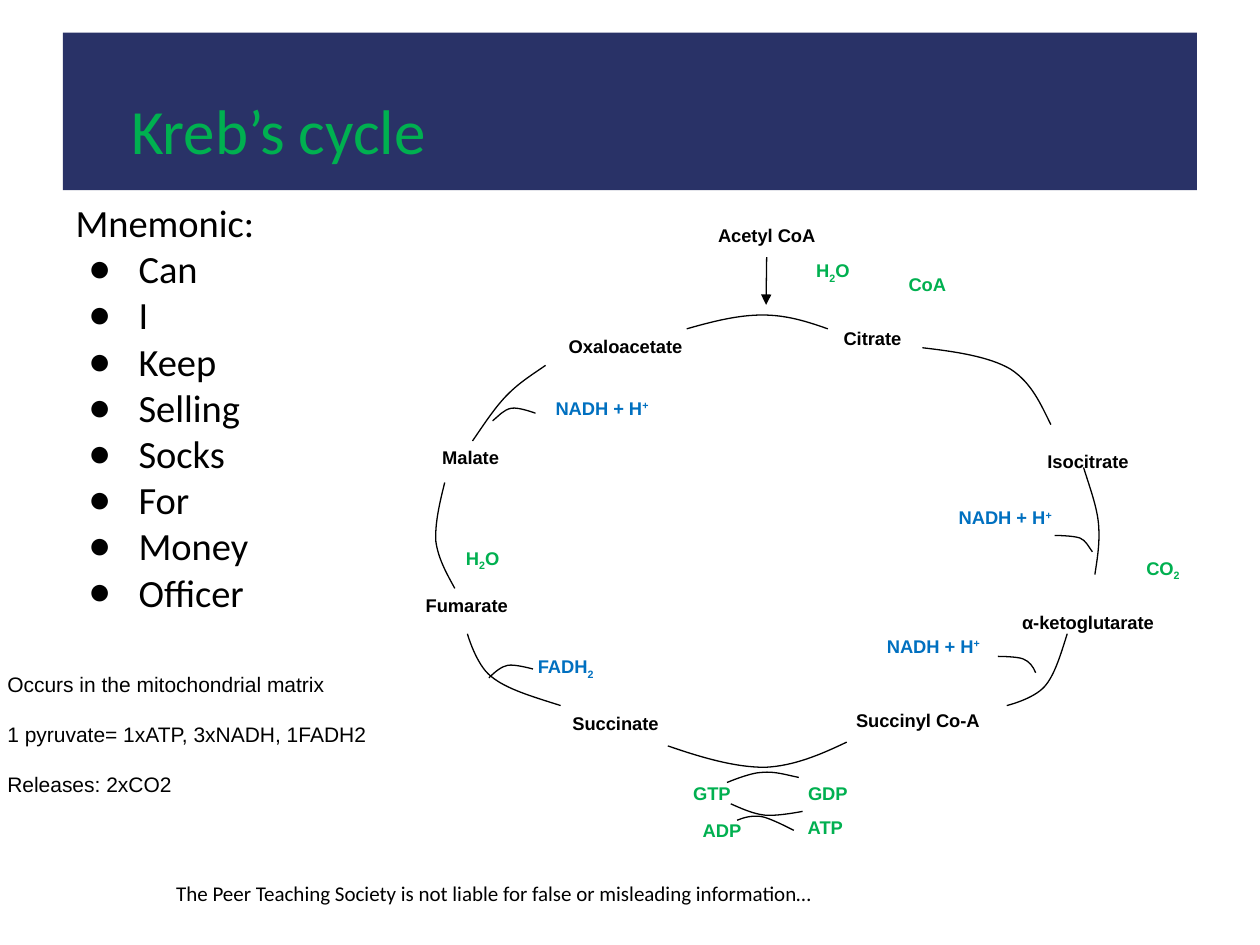
from lxml import etree
from pptx import Presentation
from pptx.dml.color import RGBColor
from pptx.enum.shapes import MSO_CONNECTOR, MSO_SHAPE
from pptx.enum.text import MSO_ANCHOR, MSO_AUTO_SIZE, PP_ALIGN
from pptx.oxml.ns import qn
from pptx.util import Inches, Pt

STRAIGHT = MSO_CONNECTOR.STRAIGHT
RECTANGLE = MSO_SHAPE.RECTANGLE
TOP = MSO_ANCHOR.TOP
NO_FIT = MSO_AUTO_SIZE.NONE
LEFT, CENTER = PP_ALIGN.LEFT, PP_ALIGN.CENTER

COLORS = {"text": "000000", "carrier": "0070C0", "green": "00B050", "banner": "293267"}


def place(box, left, top, width, height, inset=0.05):
    box.left, box.top = Inches(left), Inches(top)
    box.width, box.height = Inches(width), Inches(height)
    frame = box.text_frame
    frame.word_wrap = True
    frame.auto_size = NO_FIT
    frame.vertical_anchor = TOP
    frame.margin_left = frame.margin_right = Inches(0.1)
    frame.margin_top = frame.margin_bottom = Inches(inset)
    return frame


def add_span(para, text, size, color="text", font="Calibri", bold=False):
    span = para.add_run()
    span.text = text
    span.font.size = Pt(size)
    span.font.name = font
    span.font.bold = bold
    span.font.color.rgb = RGBColor.from_string(COLORS[color])
    return span


deck = Presentation()
deck.slide_width, deck.slide_height = Inches(10), Inches(7.5)
page = deck.slides.add_slide(deck.slide_layouts[1])
shapes = page.shapes

banner = shapes.add_shape(RECTANGLE, Inches(0.5), Inches(0.26), Inches(9), Inches(1.25))
banner.shadow.inherit = False
banner.fill.solid()
banner.fill.fore_color.rgb = RGBColor.from_string(COLORS["banner"])
banner.line.fill.background()
shapes.title._element.addprevious(banner._element)

title = place(shapes.title, 0.94, 0.68, 4.67, 0.56).paragraphs[0]
title.alignment = LEFT
add_span(title, "Kreb’s cycle", 36, "green")

mnemonic = place(page.placeholders[1], 0.5, 1.48, 2.89, 3.77, 0.1)
words = ["Mnemonic:", "Can", "I", "Keep", "Selling", "Socks", "For", "Money", "Officer"]
for index, word in enumerate(words):
    para = mnemonic.add_paragraph() if index else mnemonic.paragraphs[0]
    props = para._p.get_or_add_pPr()
    props.set("marL", str(Inches(0.5 if index else 0)))
    props.set("indent", str(Inches(-0.4 if index else 0)))
    if index:
        etree.SubElement(props, qn("a:buChar")).set("char", "●")
    else:
        etree.SubElement(props, qn("a:buNone"))
    para.space_before = Pt(0)
    add_span(para, word, 22)

facts = place(shapes.add_textbox(0, 0, 0, 0), -0.04, 5.2, 4.24, 0.94, 0.1)
lines = ["Occurs in the mitochondrial matrix", "1 pyruvate= 1xATP, 3xNADH, 1FADH2", "Releases: 2xCO2"]
for index, line in enumerate(lines):
    para = facts.add_paragraph() if index else facts.paragraphs[0]
    para.line_spacing = 1.15
    para.space_before = Pt(12 if index else 0)
    add_span(para, line, 12, font="Arial")

footer = place(shapes.add_textbox(0, 0, 0, 0), 1.3, 6.94, 5.54, 0.3)
add_span(
    footer.paragraphs[0],
    "The Peer Teaching Society is not liable for false or misleading information…",
    12,
)

SUB, SUPER = -25000, 30000
NADH = [("NADH + H", 0), ("+ ", SUPER)]
WATER = [("H", 0), ("2", SUB), ("O", 0)]
labels = [
    ("text", 1.99, [
        (5.09, 1.73, [("Acetyl CoA", 0)]),
        (5.93, 2.55, [("Citrate", 0)]),
        (7.64, 3.52, [("Isocitrate", 0)]),
        (7.64, 4.8, [("α-ketoglutarate", 0)]),
        (6.29, 5.58, [("Succinyl Co-A", 0)]),
        (3.89, 5.6, [("Succinate", 0)]),
        (2.71, 4.67, [("Fumarate", 0)]),
        (2.74, 3.49, [("Malate", 0)]),
        (3.97, 2.61, [("Oxaloacetate", 0)]),
    ]),
    ("carrier", 1.12, [
        (7.43, 3.97, NADH),
        (6.86, 4.99, NADH),
        (4.23, 3.1, NADH),
        (3.93, 5.15, [("FADH", 0), ("2", SUB)]),
    ]),
    ("green", 1.12, [
        (8.67, 4.37, [("CO", 0), ("2", SUB)]),
        (6.05, 2.01, WATER),
        (3.27, 4.29, WATER),
        (6.8, 2.12, [("CoA", 0)]),
        (6.01, 6.16, [("GDP", 0)]),
        (5.09, 6.16, [("GTP", 0)]),
        (5.17, 6.45, [("ADP", 0)]),
        (5.99, 6.43, [("ATP", 0)]),
    ]),
]
label_boxes = {}
for color, width, group in labels:
    for left, top, spans in group:
        box = shapes.add_textbox(0, 0, 0, 0)
        para = place(box, left, top, width, 0.31).paragraphs[0]
        para.alignment = CENTER
        for text, baseline in spans:
            span = add_span(para, text, 10.5, color, "Arial", True)
            if baseline:
                span._r.get_or_add_rPr().set("baseline", str(baseline))
        label_boxes[spans[0][0]] = box

arrow = shapes.add_connector(STRAIGHT, Inches(6.08), Inches(2.04), Inches(6.08), Inches(2.42))
arrow.begin_connect(label_boxes["Acetyl CoA"], 2)
arrow.line.width = Pt(0.75)
arrow.line.color.rgb = RGBColor.from_string(COLORS["text"])
etree.SubElement(arrow.line._get_or_add_ln(), qn("a:tailEnd")).set("type", "triangle")
etree.SubElement(arrow._element.spPr, qn("a:effectLst"))

curves = [
    [(5.45, 2.61), (5.66, 2.55), (5.86, 2.5), (6.05, 2.5), (6.24, 2.5), (6.4, 2.55), (6.57, 2.61)],
    [(7.32, 2.76), (7.58, 2.79), (7.85, 2.83), (8.02, 2.93), (8.19, 3.04), (8.26, 3.21), (8.34, 3.37)],
    [(8.6, 3.71), (8.65, 3.87), (8.71, 4.03), (8.72, 4.17), (8.73, 4.31), (8.71, 4.43), (8.69, 4.56)],
    [(8.47, 5.03), (8.42, 5.19), (8.37, 5.36), (8.29, 5.45), (8.2, 5.55), (7.99, 5.6), (7.99, 5.6)],
    [(6.72, 5.89), (6.51, 5.99), (6.3, 6.08), (6.07, 6.09), (5.83, 6.09), (5.56, 6.01), (5.3, 5.92)],
    [(4.45, 5.6), (4.23, 5.53), (4.02, 5.47), (3.9, 5.37), (3.78, 5.28), (3.71, 5.03), (3.71, 5.03)],
    [(3.61, 4.67), (3.55, 4.56), (3.48, 4.44), (3.46, 4.3), (3.45, 4.16), (3.49, 3.99), (3.53, 3.83)],
    [(3.75, 3.5), (3.84, 3.37), (3.93, 3.23), (4.03, 3.13), (4.13, 3.03), (4.23, 2.97), (4.33, 2.9)],
    [(8.67, 4.38), (8.64, 4.34), (8.62, 4.29), (8.57, 4.27), (8.51, 4.25), (8.37, 4.25), (8.37, 4.25)],
    [(8.22, 5.34), (8.2, 5.29), (8.17, 5.25), (8.12, 5.23), (8.07, 5.21), (7.92, 5.21), (7.92, 5.21)],
    [(3.91, 3.34), (3.96, 3.3), (4, 3.25), (4.06, 3.24), (4.12, 3.23), (4.25, 3.28), (4.25, 3.28)],
    [(3.88, 5.38), (3.93, 5.33), (3.98, 5.29), (4.03, 5.28), (4.09, 5.27), (4.23, 5.31), (4.23, 5.31)],
    [(6.34, 6.17), (6.24, 6.15), (6.15, 6.12), (6.05, 6.13), (5.96, 6.13), (5.77, 6.21), (5.77, 6.21)],
    [(5.8, 6.38), (5.89, 6.42), (5.98, 6.46), (6.07, 6.47), (6.17, 6.48), (6.37, 6.44), (6.37, 6.44)],
    [(5.85, 6.51), (5.9, 6.49), (5.96, 6.47), (6.04, 6.48), (6.11, 6.49), (6.3, 6.59), (6.3, 6.59)],
]
for points in curves:
    start, *rest = [(Inches(x), Inches(y)) for x, y in points]
    builder = shapes.build_freeform(*start)
    builder.add_line_segments(rest, close=False)
    curve = builder.convert_to_shape()
    curve.shadow.inherit = False
    curve.fill.background()
    curve.line.width = Pt(0.75)
    curve.line.color.rgb = RGBColor.from_string(COLORS["text"])
    outline = next(curve._element.iter(qn("a:path")))
    segments = outline.findall(qn("a:lnTo"))
    for first in range(0, len(segments), 3):
        bezier = etree.SubElement(outline, qn("a:cubicBezTo"))
        for segment in segments[first:first + 3]:
            bezier.append(segment[0])
            outline.remove(segment)

deck.save("out.pptx")
